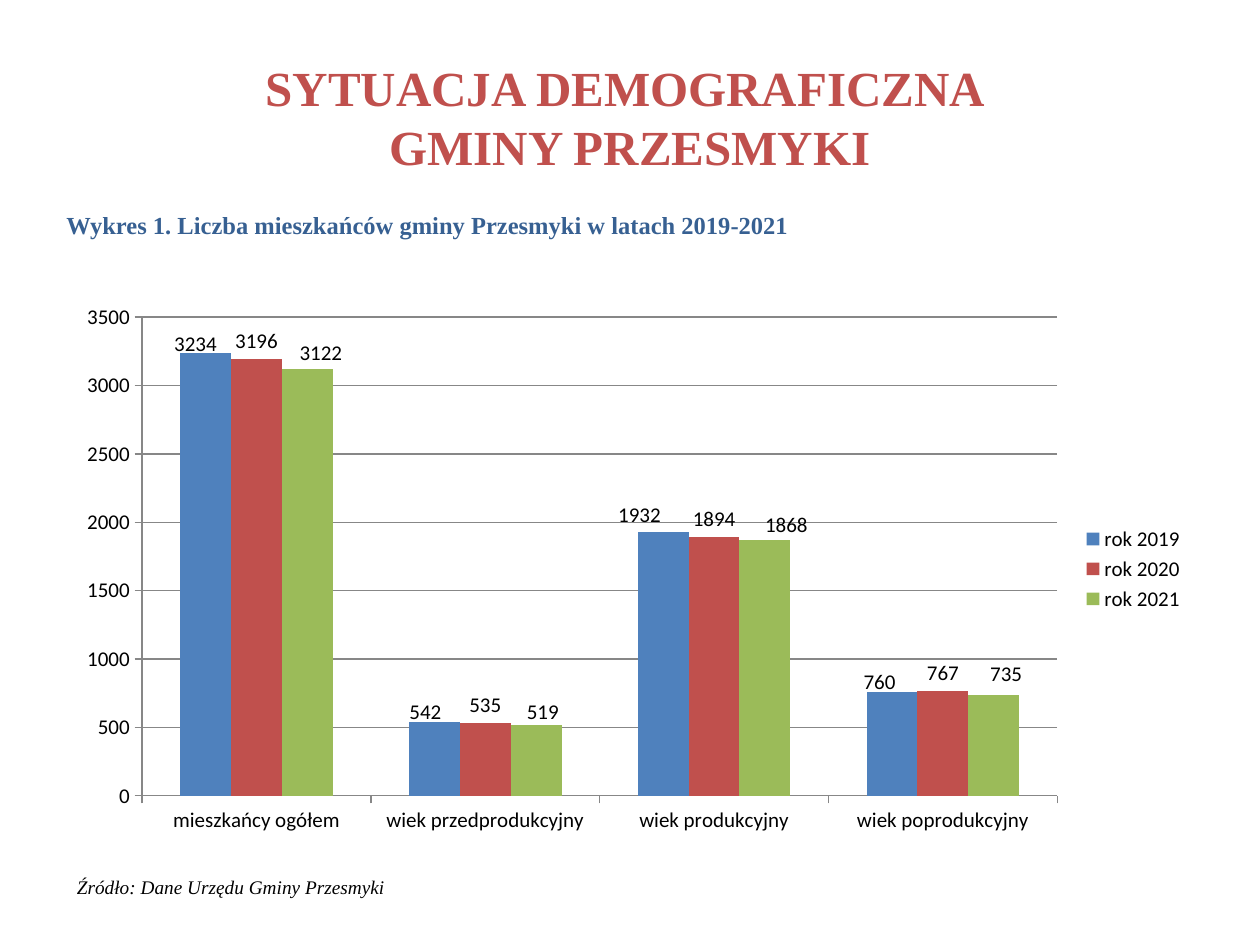
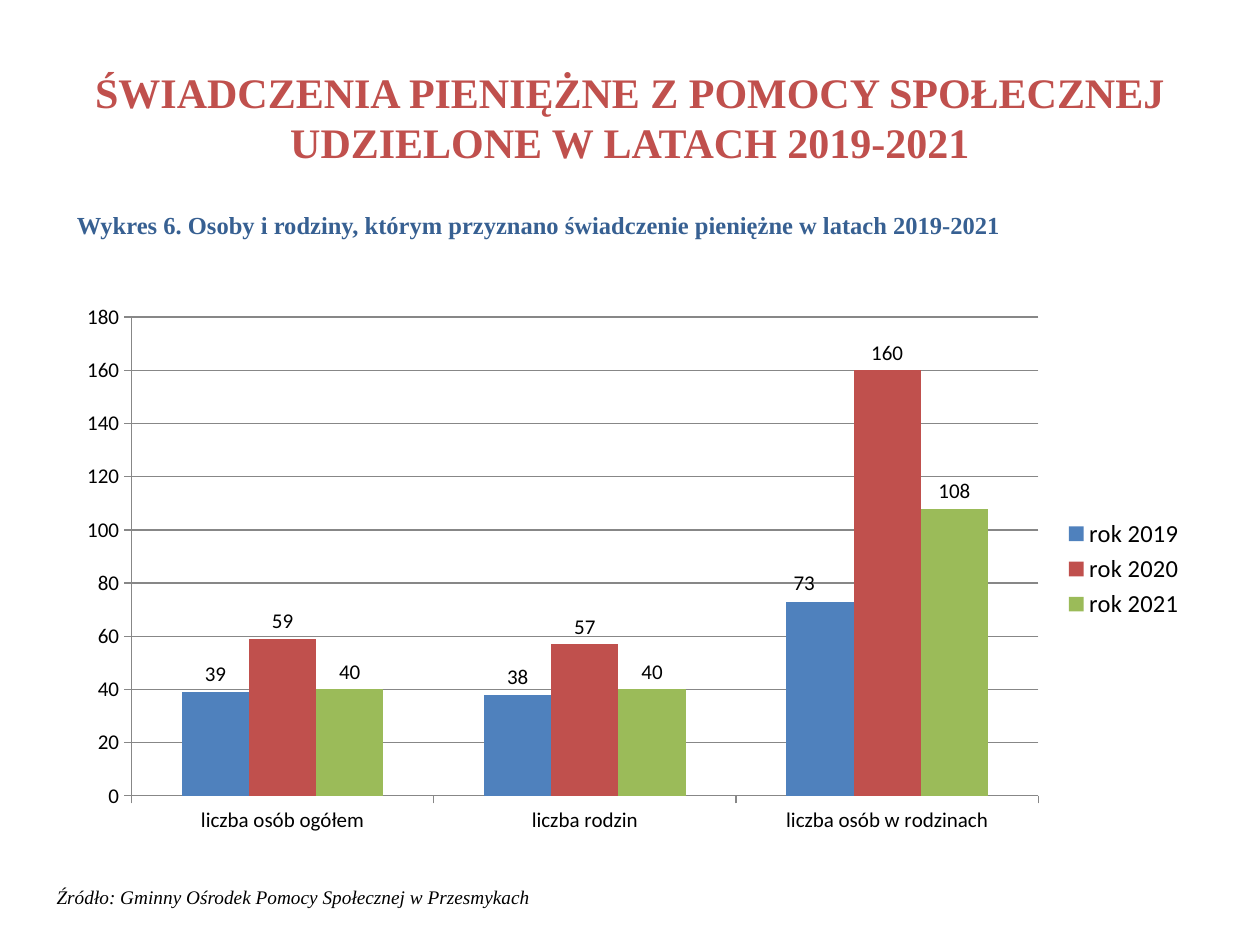
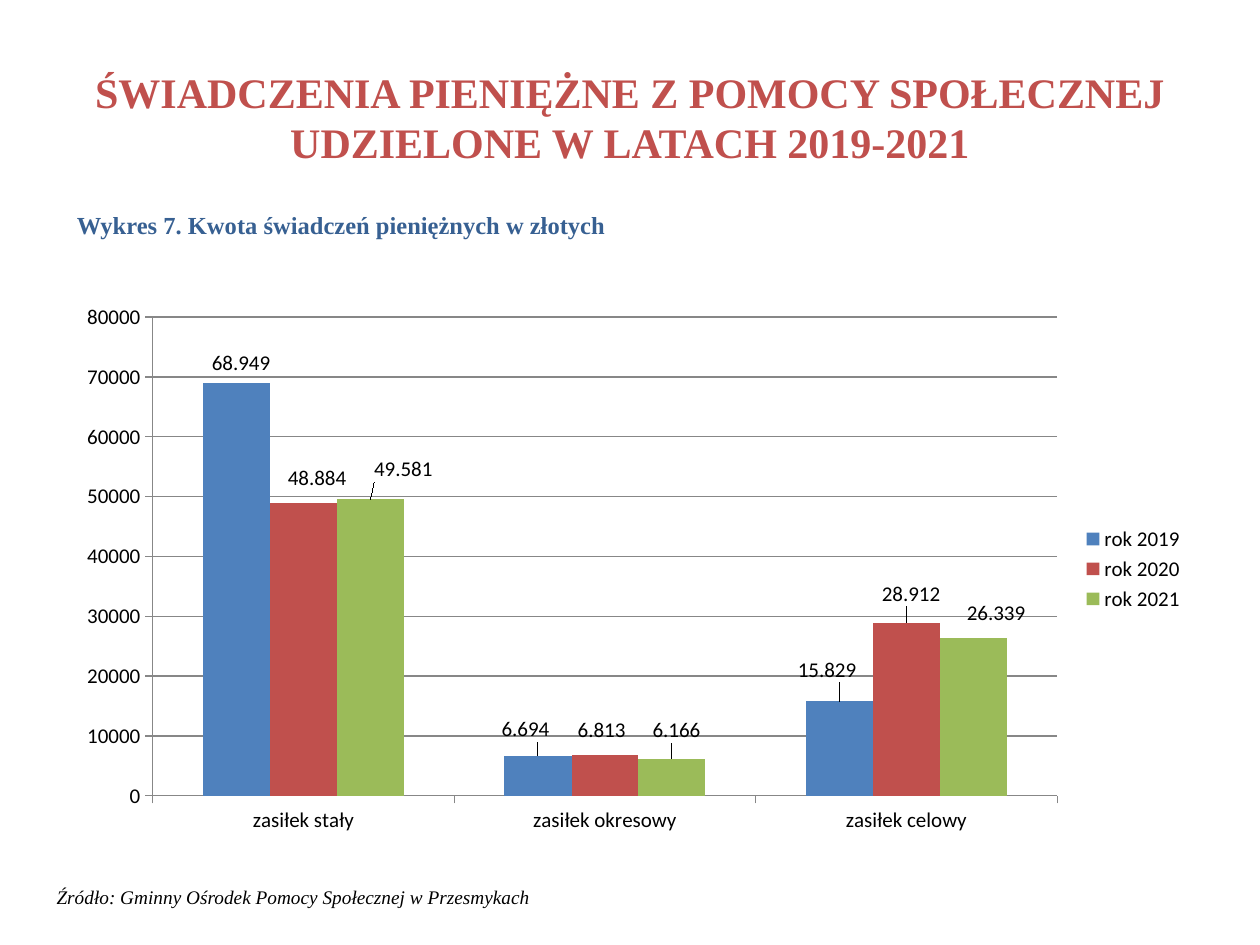
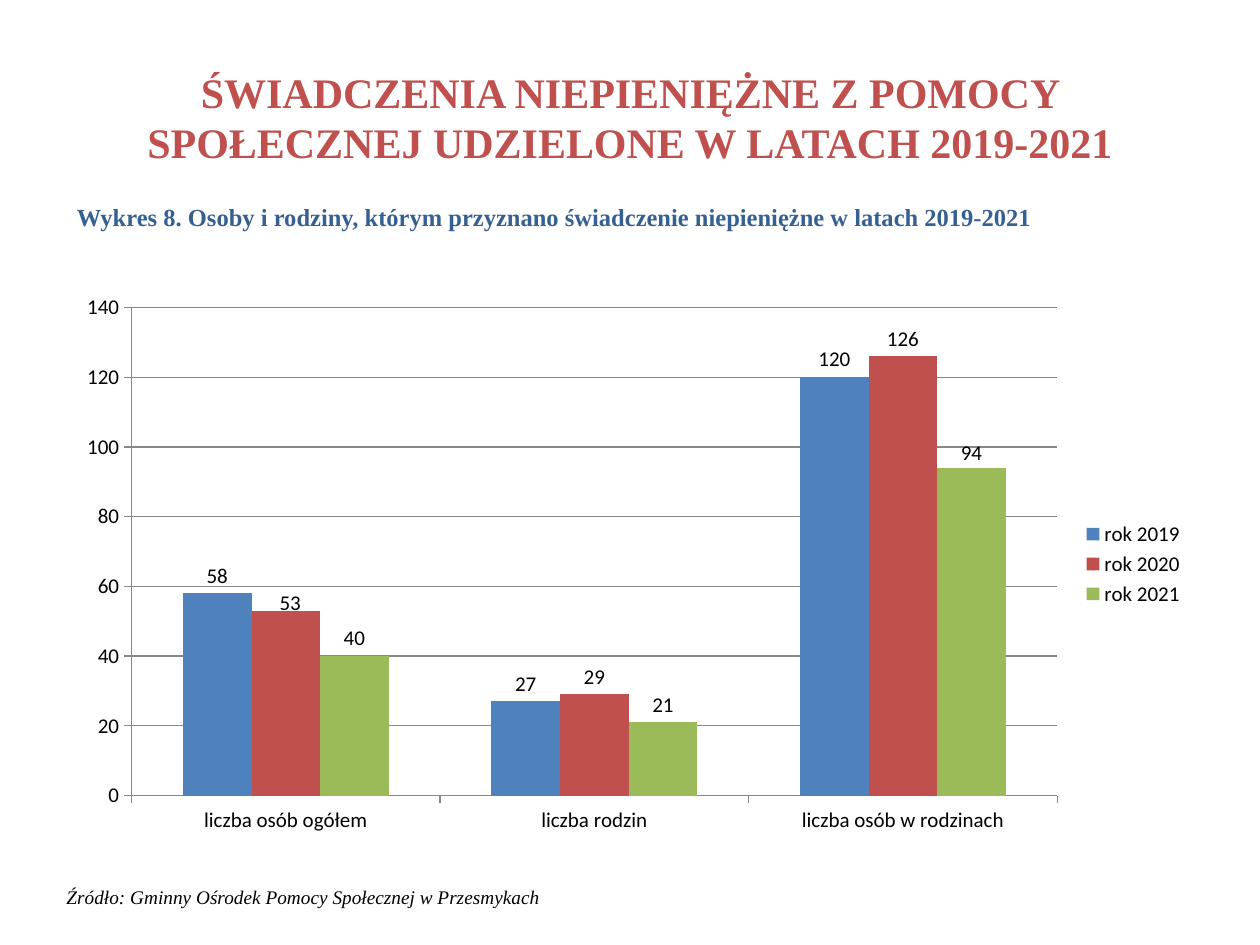
from lxml.etree import SubElement
from pptx import Presentation
from pptx.chart.data import CategoryChartData
from pptx.dml.color import RGBColor
from pptx.enum.chart import XL_CHART_TYPE as ChartType
from pptx.enum.chart import XL_LABEL_POSITION as LabelPosition
from pptx.enum.chart import XL_LEGEND_POSITION as LegendPosition
from pptx.enum.chart import XL_TICK_MARK as TickMark
from pptx.enum.text import MSO_ANCHOR as Anchor
from pptx.enum.text import MSO_AUTO_SIZE as AutoSize
from pptx.enum.text import PP_ALIGN as Align
from pptx.oxml.ns import qn
from pptx.util import Cm, Pt

SERIF, SANS = "Times New Roman", "Calibri"
RED, NAVY, BLACK, GREY = "C0504D", "376092", "000000", "878787"
SERIES_COLORS = ["4F81BD", RED, "9BBB59"]
YEARS = ["rok 2019", "rok 2020", "rok 2021"]

MARGIN, CHART_WIDTH, CHART_BOTTOM = 1.3, 22.83, 17.02
CASH_TITLE = "ŚWIADCZENIA PIENIĘŻNE Z POMOCY SPOŁECZNEJ UDZIELONE W LATACH 2019-2021"
CENTRE_SOURCE = "Źródło: Gminny Ośrodek Pomocy Społecznej w Przesmykach"
PEOPLE = ["liczba osób ogółem", "liczba rodzin", "liczba osób w rodzinach"]

# "shifts" moves labels: (series, category) -> percent of chart width and height.
SLIDES = [
    {
        "title": "SYTUACJA DEMOGRAFICZNA \vGMINY PRZESMYKI",
        "title_size": 28,
        "caption": "Wykres 1. Liczba mieszkańców gminy Przesmyki w latach 2019-2021",
        "caption_at": (1.09, 4.11, 22.63),
        "categories": ["mieszkańcy ogółem", "wiek przedprodukcyjny",
                       "wiek produkcyjny", "wiek poprodukcyjny"],
        "values": [(3234, 542, 1932, 760), (3196, 535, 1894, 767), (3122, 519, 1868, 735)],
        "shifts": {(0, 0): (-0.9, 1.5), (0, 1): (-0.8, 1.5), (0, 2): (-2.1, 0.2),
                   (0, 3): (-1.1, 1.5), (2, 0): (1.2, 0.4), (2, 1): (0.6, 0.9),
                   (2, 2): (1.9, 0.4), (2, 3): (1.1, -0.7)},
        "source": "Źródło: Dane Urzędu Gminy Przesmyki",
        "source_at": (MARGIN, 17.53, 6.76),
        "source_wrap": False,
    },
    {
        "title": CASH_TITLE,
        "caption": "Wykres 6. Osoby i rodziny, którym przyznano świadczenie pieniężne "
                   "w latach 2019-2021",
        "categories": PEOPLE,
        "values": [(39, 38, 73), (59, 57, 160), (40, 40, 108)],
        "shifts": {(0, 2): (-1.4, -0.2)},
        "legend_size": 14,
    },
    {
        "title": CASH_TITLE,
        "caption": "Wykres 7. Kwota świadczeń pieniężnych w złotych",
        "categories": ["zasiłek stały", "zasiłek okresowy", "zasiłek celowy"],
        "values": [(68949, 6694, 15829), (48884, 6813, 28912), (49581, 6166, 26339)],
        "shifts": {(0, 0): (0.4, -0.5), (0, 1): (-1.1, -1.6), (0, 2): (-1.1, -2.4),
                   (1, 0): (1.2, -1.3), (1, 1): (-0.3, -1.3), (1, 2): (0.4, -2),
                   (2, 0): (2.9, -2.2), (2, 1): (0.4, -2), (2, 2): (2, -1.3)},
        "dotted_thousands": True,
    },
    {
        "title": "ŚWIADCZENIA NIEPIENIĘŻNE Z POMOCY SPOŁECZNEJ UDZIELONE W LATACH 2019-2021",
        "caption": "Wykres 8. Osoby i rodziny, którym przyznano świadczenie niepieniężne "
                   "w latach 2019-2021",
        "caption_at": (MARGIN, 3.94, CHART_WIDTH),
        "categories": PEOPLE,
        "values": [(58, 27, 120), (53, 29, 126), (40, 21, 94)],
        "shifts": {(1, 0): (0.4, 1.8), (2, 2): (0, 0.5)},
        "chart_top": 5.72,
        "source_at": (1.09, 17.73, 12.7),
    },
]
DEFAULTS = {
    "title_size": 24, "caption_at": (MARGIN, 4.11, CHART_WIDTH), "chart_top": 5.92,
    "legend_size": 12, "dotted_thousands": False, "source": CENTRE_SOURCE,
    "source_at": (0.89, 17.73, 12.7), "source_wrap": True,
}


def rgb(color):
    return RGBColor.from_string(color)


def set_font(font, size, color=BLACK, name=SANS, bold=False, italic=False):
    font.size, font.name, font.bold, font.italic = Pt(size), name, bold, italic
    font.color.rgb = rgb(color)


def add_text(slide, text, left, top, width, height, align=Align.LEFT, anchor=Anchor.TOP,
             hanging=0, wrap=True, grow=False, **font_format):
    box = slide.shapes.add_textbox(Cm(left), Cm(top), Cm(width), Cm(height))
    frame = box.text_frame
    frame.word_wrap, frame.vertical_anchor = wrap, anchor
    if grow:
        frame.auto_size = AutoSize.SHAPE_TO_FIT_TEXT
    paragraph = frame.paragraphs[0]
    paragraph.text, paragraph.alignment = text, align
    if hanging:
        properties = paragraph._p.get_or_add_pPr()
        properties.set("marL", str(Cm(hanging)))
        properties.set("indent", str(-Cm(hanging)))
    for run in paragraph.runs:
        set_font(run.font, name=SERIF, **font_format)


def shift_label(series, index, shift, text=None):
    """Move one data label by percents of the chart, with its own text if given."""
    label = series.points[index].data_label
    if text:
        run = label.text_frame.paragraphs[0].add_run()
        run.text = text
        set_font(run.font, 12)
    else:
        set_font(label.font, 12)
    label.position = LabelPosition.OUTSIDE_END
    element = series._element.xpath(f"c:dLbls/c:dLbl[c:idx/@val='{index}']")[0]
    layout = SubElement(element, qn("c:layout"))
    element.insert(1, layout)
    manual = SubElement(layout, qn("c:manualLayout"))
    for axis, percent in zip("xy", shift):
        SubElement(manual, qn(f"c:{axis}")).set("val", f"{percent / 100:.3f}")


def style_axis(axis):
    axis.major_tick_mark, axis.minor_tick_mark = TickMark.OUTSIDE, TickMark.NONE
    set_font(axis.tick_labels.font, 12)
    lines = [axis.format.line]
    if axis.has_major_gridlines:
        lines.append(axis.major_gridlines.format.line)
    for line in lines:
        line.color.rgb, line.width = rgb(GREY), Pt(0.75)


def add_column_chart(slide, content):
    data = CategoryChartData()
    data.categories = content["categories"]
    for year, values in zip(YEARS, content["values"]):
        data.add_series(year, values)
    top = content["chart_top"]
    chart = slide.shapes.add_chart(
        ChartType.COLUMN_CLUSTERED, Cm(MARGIN), Cm(top), Cm(CHART_WIDTH),
        Cm(CHART_BOTTOM - top), data).chart
    set_font(chart.font, 18)
    chart.has_title = False
    chart.has_legend = True
    chart.legend.position, chart.legend.include_in_layout = LegendPosition.RIGHT, False
    set_font(chart.legend.font, content["legend_size"])
    chart.value_axis.has_major_gridlines = True
    style_axis(chart.category_axis)
    style_axis(chart.value_axis)

    plot = chart.plots[0]
    plot.gap_width, plot.vary_by_categories = 150, False
    for series, color in zip(plot.series, SERIES_COLORS):
        series.format.fill.solid()
        series.format.fill.fore_color.rgb = rgb(color)
        labels = series.data_labels
        labels.show_value, labels.position = True, LabelPosition.OUTSIDE_END
        set_font(labels.font, 12)
    for (row, column), shift in content["shifts"].items():
        value = content["values"][row][column]
        text = f"{value:,}".replace(",", ".") if content["dotted_thousands"] else None
        shift_label(plot.series[row], column, shift, text)


def build_slide(presentation, content):
    slide = presentation.slides.add_slide(presentation.slide_layouts[6])
    add_text(slide, content["title"], 1.27, 0.76, 22.86, 3.18, align=Align.CENTER,
             anchor=Anchor.MIDDLE, size=content["title_size"], color=RED, bold=True)
    add_text(slide, content["caption"], *content["caption_at"], 1.27, hanging=0.95,
             size=14, color=NAVY, bold=True)
    add_column_chart(slide, content)
    add_text(slide, content["source"], *content["source_at"], 0.74, grow=True,
             wrap=content["source_wrap"], size=11, italic=True)


def main():
    presentation = Presentation()
    presentation.slide_width, presentation.slide_height = Cm(25.4), Cm(19.05)
    for content in SLIDES:
        build_slide(presentation, DEFAULTS | content)
    presentation.save("out.pptx")


if __name__ == "__main__":
    main()
